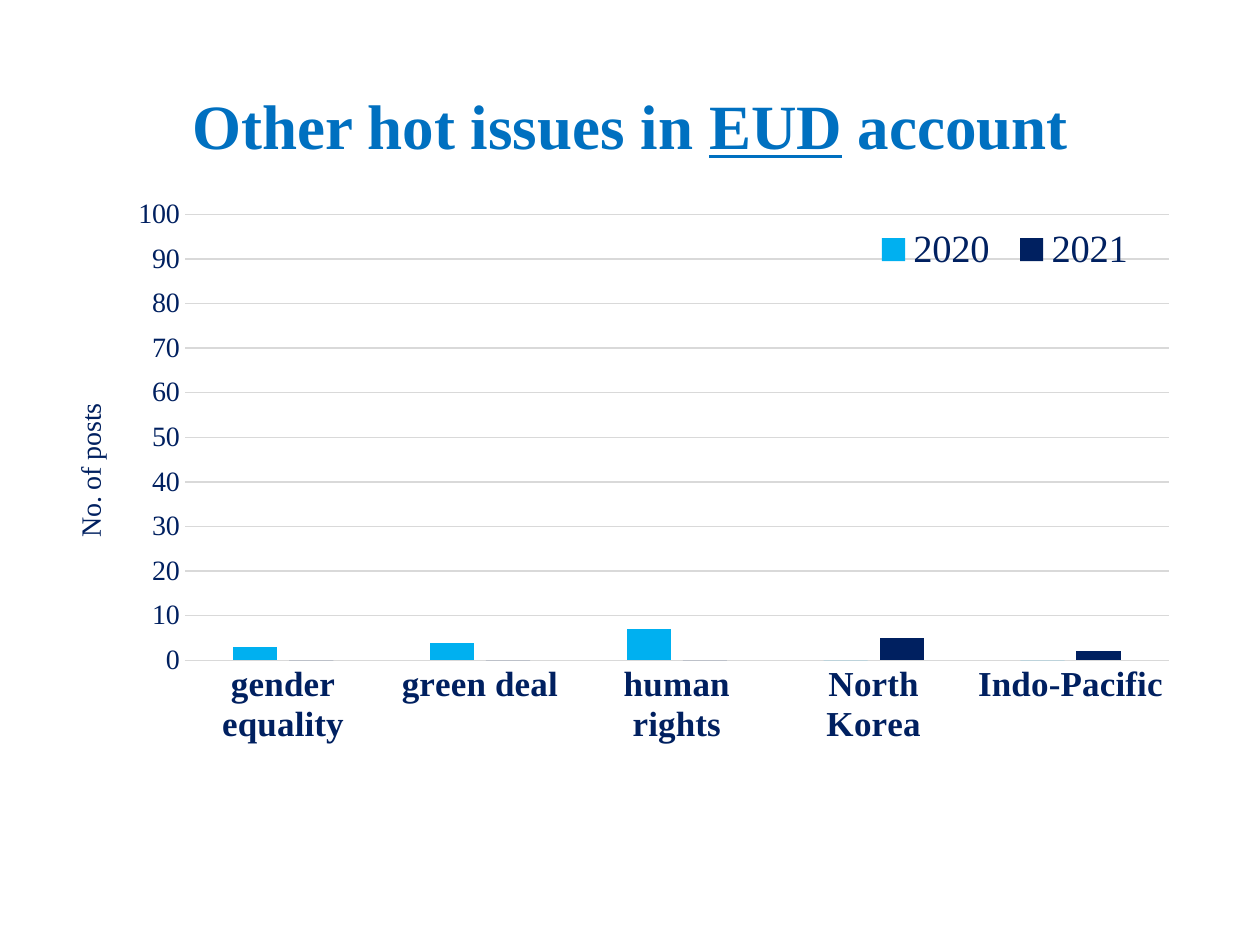
from lxml.etree import SubElement
from pptx import Presentation
from pptx.chart.data import CategoryChartData
from pptx.dml.color import RGBColor
from pptx.enum.chart import XL_CHART_TYPE, XL_LEGEND_POSITION, XL_TICK_MARK
from pptx.enum.text import MSO_ANCHOR, MSO_AUTO_SIZE, PP_ALIGN
from pptx.oxml.ns import qn
from pptx.util import Inches, Pt

FONT = "Times New Roman"
TITLE_BLUE = RGBColor(0x00, 0x70, 0xC0)
SKY = RGBColor(0x00, 0xB0, 0xF0)
NAVY = RGBColor(0x00, 0x20, 0x60)
GRID_GREY = RGBColor(0xD9, 0xD9, 0xD9)

ISSUES = ["gender equality", "green deal", "human rights", "North Korea", "Indo-Pacific"]
POSTS_BY_YEAR = {
    "2020": ((3, 4, 7, 0, 0), SKY),
    "2021": ((0, 0, 0, 5, 2), NAVY),
}


def style_font(font, size, color=NAVY, bold=False):
    font.name = FONT
    font.size = Pt(size)
    font.bold = bold
    font.color.rgb = color


def style_line(line):
    line.color.rgb = GRID_GREY
    line.width = Pt(0.75)


def place_part(part, index, **shares):
    """Fix a chart part's position, in shares of the chart's size."""
    layout = part.find(qn("c:layout"))
    if layout is None:
        layout = part.makeelement(qn("c:layout"))
        part.insert(index, layout)
    manual = SubElement(layout, qn("c:manualLayout"))
    if "w" in shares and index == 0:
        SubElement(manual, qn("c:layoutTarget"), val="inner")
    for key in ("x", "y"):
        SubElement(manual, qn(f"c:{key}Mode"), val="edge")
    for key, share in shares.items():
        SubElement(manual, qn(f"c:{key}"), val=str(share))


def add_title(slide):
    title = slide.shapes.title
    title.left, title.top = Inches(0.69), Inches(0.63)
    title.width, title.height = Inches(8.62), Inches(0.79)
    frame = title.text_frame
    frame.auto_size = MSO_AUTO_SIZE.NONE
    frame.vertical_anchor = MSO_ANCHOR.MIDDLE
    heading = frame.paragraphs[0]
    heading.alignment = PP_ALIGN.CENTER
    heading.line_spacing = 0.9
    for text, underlined in (("Other hot issues in ", False), ("EUD", True), (" account", False)):
        run = heading.add_run()
        run.text = text
        run.font.underline = underlined
    style_font(heading.font, 36, TITLE_BLUE, bold=True)


def style_axes(chart):
    issues = chart.category_axis
    issues.major_tick_mark = XL_TICK_MARK.NONE
    style_font(issues.tick_labels.font, 20, bold=True)
    style_line(issues.format.line)

    posts = chart.value_axis
    posts.minimum_scale, posts.maximum_scale, posts.major_unit = 0, 100, 10
    posts.major_tick_mark = XL_TICK_MARK.NONE
    style_font(posts.tick_labels.font, 16)
    posts.format.line.fill.background()
    style_line(posts.major_gridlines.format.line)

    label = posts.axis_title.text_frame.paragraphs[0]
    label.text = "No. of posts"
    style_font(label.font, 16)
    posts.axis_title.text_frame._txBody.bodyPr.set("rot", "-5400000")
    place_part(posts.axis_title._element, 1, x=0.02, y=0.31)


def add_posts_chart(slide):
    data = CategoryChartData()
    data.categories = ISSUES
    for year, (posts, _) in POSTS_BY_YEAR.items():
        data.add_series(year, posts)
    chart = slide.shapes.add_chart(
        XL_CHART_TYPE.COLUMN_CLUSTERED,
        Inches(0.35), Inches(1.42), Inches(9.3), Inches(5.62), data,
    ).chart
    chart.has_title = False
    style_font(chart.font, 16)

    # Columns
    columns = chart.plots[0]
    columns.gap_width, columns.overlap = 219, -27
    columns.vary_by_categories = False
    for series, (_, color) in zip(columns.series, POSTS_BY_YEAR.values()):
        series.format.fill.solid()
        series.format.fill.fore_color.rgb = color

    style_axes(chart)

    # Legend laid over the upper right of the plot
    chart.has_legend = True
    chart.legend.position = XL_LEGEND_POSITION.TOP
    chart.legend.include_in_layout = False
    style_font(chart.legend.font, 22)
    place_part(chart.legend._element, 1, x=0.7, y=0.06, w=0.24, h=0.08)
    place_part(chart._chartSpace.chart.plotArea, 0, x=0.12, y=0.05, w=0.84, h=0.63)


def main():
    deck = Presentation()
    deck.slide_width, deck.slide_height = Inches(10), Inches(7.5)
    slide = deck.slides.add_slide(deck.slide_layouts[5])
    add_title(slide)
    add_posts_chart(slide)
    deck.save("out.pptx")


if __name__ == "__main__":
    main()
